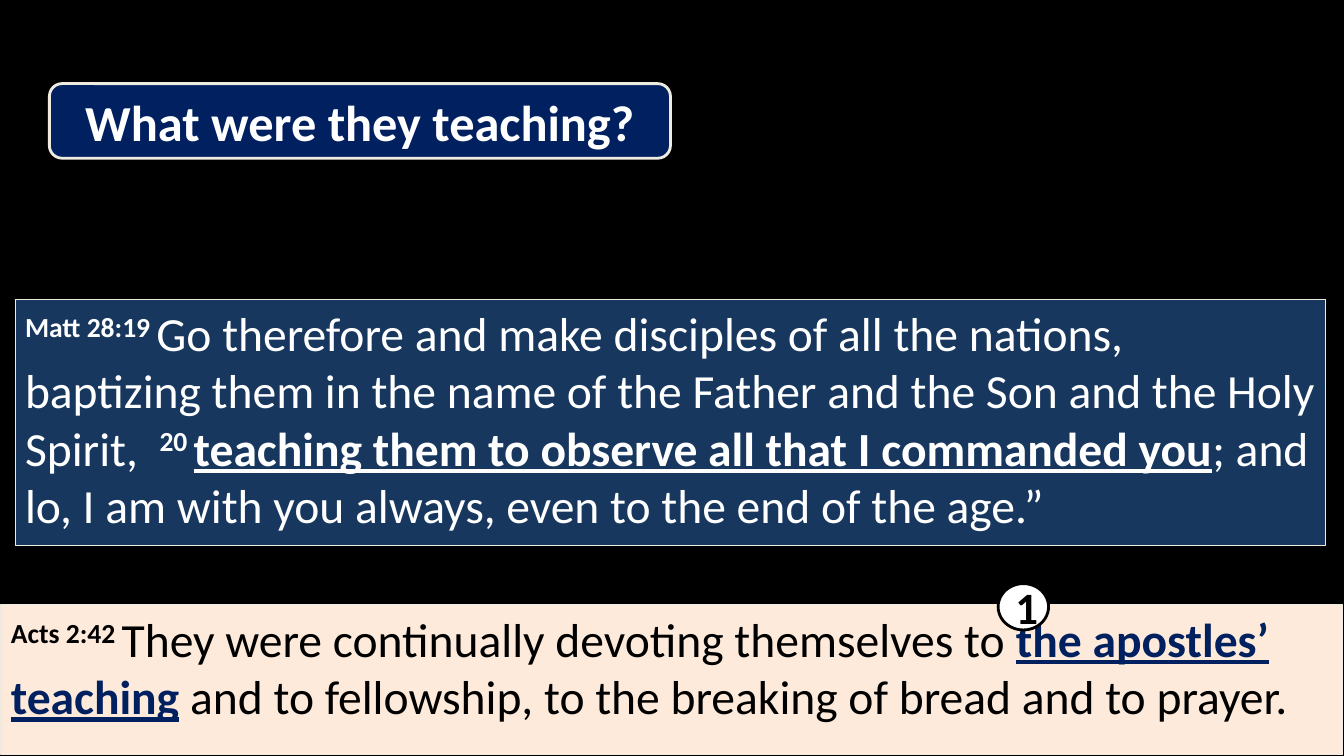
from pptx import Presentation
from pptx import util as u
from pptx.dml.color import RGBColor
from pptx.enum import shapes, text

PX = u.Inches(1) // 100
COLORS = {
    "black": "000000",
    "white": "FFFFFF",
    "navy": "002060",
    "blue": "17375E",
    "peach": "FDEADA",
    "border": "EEECE1",
}


def color(name):
    return RGBColor.from_string(COLORS[name])


def add_panel(page, kind, bounds, fill, line, line_width):
    panel = page.shapes.add_shape(kind, *(value * PX for value in bounds))
    panel.shadow.inherit = False
    panel.fill.solid()
    panel.fill.fore_color.rgb = color(fill)
    panel.line.color.rgb = color(line)
    panel.line.width = u.Pt(line_width)
    panel.text_frame.word_wrap = True
    return panel


def set_label(panel, wording, size, ink):
    panel.text_frame.vertical_anchor = text.MSO_ANCHOR.MIDDLE
    para = panel.text_frame.paragraphs[0]
    para.text = wording
    para.alignment = text.PP_ALIGN.CENTER
    para.font.name = "Calibri"
    para.font.size = u.Pt(size)
    para.font.bold = True
    para.font.color.rgb = color(ink)


def add_verse(page, bounds, fill, ink, key_ink, spans):
    """Add a scripture panel from (style, wording) spans: ref, plain or key."""
    panel = add_panel(page, shapes.MSO_SHAPE.RECTANGLE, bounds, fill, "border", 0.75)
    panel.text_frame.vertical_anchor = text.MSO_ANCHOR.TOP
    para = panel.text_frame.paragraphs[0]
    para.alignment = text.PP_ALIGN.LEFT
    para.font.name = "Calibri"
    para.font.size = u.Pt(34)
    for style, wording in spans:
        span = para.add_run()
        span.text = wording
        span.font.bold = style != "plain"
        span.font.underline = style == "key"
        span.font.color.rgb = color(key_ink if style == "key" else ink)
        if style == "ref":
            span._r.get_or_add_rPr().set("baseline", "30000")


def main():
    deck = Presentation()
    deck.slide_width, deck.slide_height = 1333 * PX, 750 * PX
    page = deck.slides.add_slide(deck.slide_layouts[6])
    page.background.fill.solid()
    page.background.fill.fore_color.rgb = color("black")

    add_verse(page, (1, 600, 1331, 149), "peach", "black", "navy", [
        ("ref", "Acts 2:42 "),
        ("plain", "They were continually devoting themselves to "),
        ("key", "the apostles’ teaching"),
        ("plain", " and to fellowship, to the breaking of bread and to prayer."),
    ])

    badge = add_panel(page, shapes.MSO_SHAPE.OVAL, (990, 579, 50, 46), "white", "black", 2)
    set_label(badge, "1", 32, "black")

    question = add_panel(page, shapes.MSO_SHAPE.ROUNDED_RECTANGULAR_CALLOUT,
                         (49, 83, 616, 74), "navy", "border", 2)
    for index, value in enumerate((-0.22, 0.5, 0.17)):
        question.adjustments[index] = value
    set_label(question, "What were they teaching?", 36, "white")

    add_verse(page, (15, 297, 1300, 244), "blue", "white", "white", [
        ("ref", "Matt 28:19 "),
        ("plain", "Go therefore and make disciples of all the nations,  baptizing them "
                  "in the name of the Father and the Son and the Holy Spirit,  "),
        ("ref", "20 "),
        ("key", "teaching them to observe all that I commanded you"),
        ("plain", "; and lo, I am with you always, even to the end of the age.”"),
    ])

    deck.save("out.pptx")


if __name__ == "__main__":
    main()
